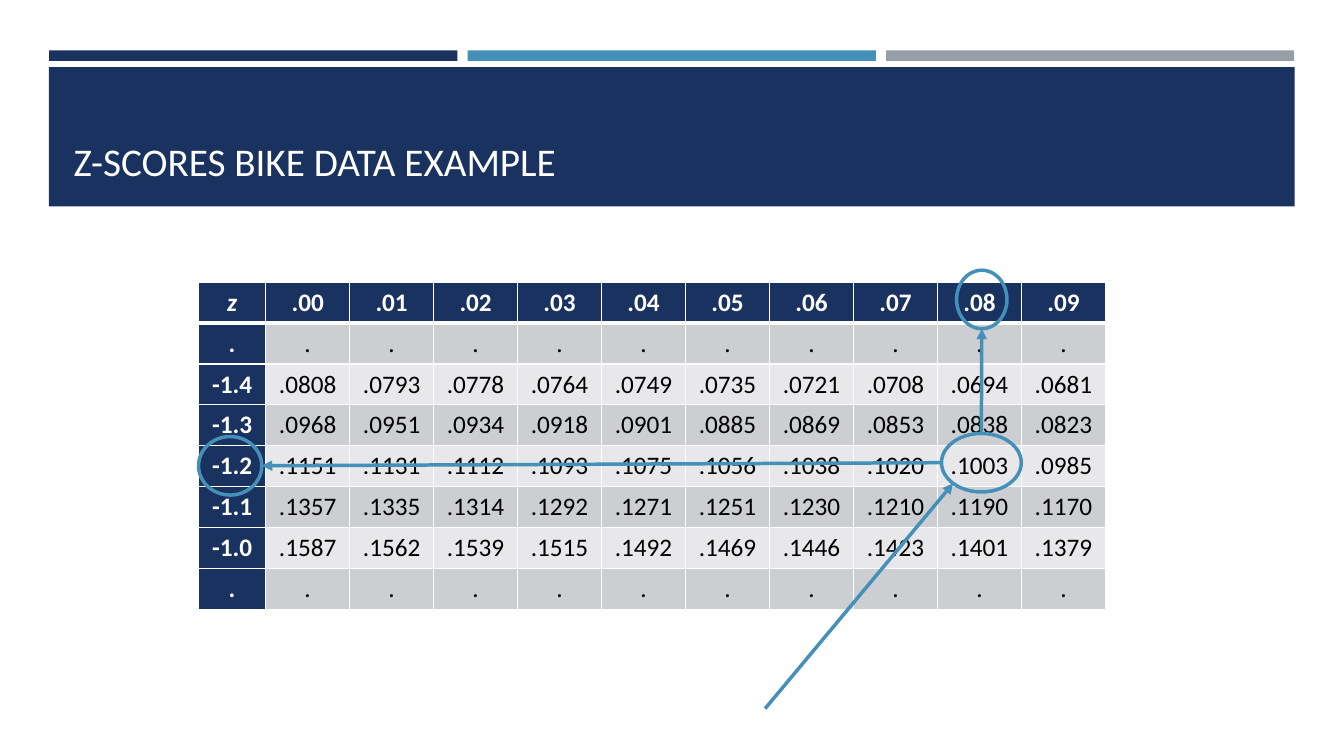
from math import sqrt

from lxml import etree
from pptx import Presentation
from pptx.dml.color import RGBColor
from pptx.enum.shapes import MSO_CONNECTOR, MSO_SHAPE
from pptx.enum.text import MSO_ANCHOR, PP_ALIGN
from pptx.oxml.ns import qn
from pptx.util import Pt

RECT, OVAL = MSO_SHAPE.RECTANGLE, MSO_SHAPE.OVAL
STRAIGHT = MSO_CONNECTOR.STRAIGHT
MIDDLE, BOTTOM = MSO_ANCHOR.MIDDLE, MSO_ANCHOR.BOTTOM
LEFT, CENTER = PP_ALIGN.LEFT, PP_ALIGN.CENTER

FONT = "Calibri"
NAVY, BLUE, GRAY = "1A3260", "4590B8", "969FA7"
WHITE, BLACK = "FFFFFF", "000000"
BANDS = ("E8E8EA", "CDCED2")

TITLE = "Z-SCORES BIKE DATA EXAMPLE"
Z_TABLE = [
    ["z", ".00", ".01", ".02", ".03", ".04", ".05", ".06", ".07", ".08", ".09"],
    ["."] * 11,
    ["-1.4", ".0808", ".0793", ".0778", ".0764", ".0749", ".0735", ".0721", ".0708", ".0694", ".0681"],
    ["-1.3", ".0968", ".0951", ".0934", ".0918", ".0901", ".0885", ".0869", ".0853", ".0838", ".0823"],
    ["-1.2", ".1151", ".1131", ".1112", ".1093", ".1075", ".1056", ".1038", ".1020", ".1003", ".0985"],
    ["-1.1", ".1357", ".1335", ".1314", ".1292", ".1271", ".1251", ".1230", ".1210", ".1190", ".1170"],
    ["-1.0", ".1587", ".1562", ".1539", ".1515", ".1492", ".1469", ".1446", ".1423", ".1401", ".1379"],
    ["."] * 11,
]

# Lengths in points: left, top, width, height
BANNER = (34.9, 48, 889.9, 99.4)
BAR_LEFT, BAR_TOP, BAR_W, BAR_H, BAR_STEP = 35.1, 36, 291.6, 7.6, 298.9
TITLE_BOX = (45.4, 57.6, 868.3, 77.8)
TABLE_LEFT, TABLE_TOP = 141.8, 201.6
Z_COL_W, COL_W, ROW_H = 48, 60, 29.16
COLUMN_RING = (683.3, 193, 36, 41.8)
ROW_RING = (141.8, 311.8, 45.2, 41.8)
VALUE_RING = (672.5, 309.6, 57, 41.8)
POINTER_START = (546.5, 506.2)


def rgb(color):
    return RGBColor.from_string(color)


def points(values):
    return [Pt(v) for v in values]


def style_text(tf, size, color, align, anchor, bold=False, italic=False):
    tf.vertical_anchor = anchor
    p = tf.paragraphs[0]
    p.alignment = align
    font = p.runs[0].font
    font.name, font.size, font.bold, font.italic = FONT, Pt(size), bold, italic
    font.color.rgb = rgb(color)


def add_block(s, box, color):
    sp = s.shapes.add_shape(RECT, *points(box))
    sp.shadow.inherit = False
    sp.fill.solid()
    sp.fill.fore_color.rgb = rgb(color)
    sp.line.fill.background()


def add_ring(s, box):
    sp = s.shapes.add_shape(OVAL, *points(box))
    sp.shadow.inherit = False
    sp.fill.background()
    sp.line.color.rgb = rgb(BLUE)
    sp.line.width = Pt(2.5)


def add_arrow(s, start, end):
    arrow = s.shapes.add_connector(STRAIGHT, *points(start + end))
    arrow.line.color.rgb = rgb(BLUE)
    arrow.line.width = Pt(2.5)
    ln = arrow.line._get_or_add_ln()
    etree.SubElement(ln, qn("a:tailEnd"), type="triangle")
    etree.SubElement(arrow._element.spPr, qn("a:effectLst"))


def ring_point(box, dx, dy):
    """Point on a ring; (dx, dy) is a unit vector from its centre."""
    left, top, width, height = box
    return left + width / 2 * (1 + dx), top + height / 2 * (1 + dy)


def set_borders(cell, row):
    """White cell borders, with a thicker rule under the header row."""
    tcPr = cell._tc.get_or_add_tcPr()
    widths = {"lnL": 1, "lnR": 1, "lnT": 3 if row == 1 else 1, "lnB": 3 if row == 0 else 1}
    for i, (tag, width) in enumerate(widths.items()):
        ln = etree.Element(qn("a:" + tag), w=str(Pt(width)))
        fill = etree.SubElement(ln, qn("a:solidFill"))
        etree.SubElement(fill, qn("a:srgbClr"), val=WHITE)
        tcPr.insert(i, ln)


def add_z_table(s):
    rows, cols = len(Z_TABLE), len(Z_TABLE[0])
    width = Z_COL_W + COL_W * (cols - 1)
    box = points((TABLE_LEFT, TABLE_TOP, width, ROW_H * rows))
    table = s.shapes.add_table(rows, cols, *box).table
    for c, column in enumerate(table.columns):
        column.width = Pt(COL_W if c else Z_COL_W)
    for r, values in enumerate(Z_TABLE):
        table.rows[r].height = Pt(ROW_H)
        for c, value in enumerate(values):
            cell = table.cell(r, c)
            header = r == 0 or c == 0
            cell.fill.solid()
            cell.fill.fore_color.rgb = rgb(NAVY if header else BANDS[r % 2])
            cell.vertical_anchor = MIDDLE
            cell.text_frame.text = value
            style_text(cell.text_frame, 18, WHITE if header else BLACK, CENTER, MIDDLE,
                       bold=header, italic=value == "z")
            set_borders(cell, r)


def main():
    prs = Presentation()
    prs.slide_width, prs.slide_height = Pt(960), Pt(540)
    s = prs.slides.add_slide(prs.slide_layouts[5])

    for i, color in enumerate((NAVY, BLUE, GRAY)):
        add_block(s, (BAR_LEFT + i * BAR_STEP, BAR_TOP, BAR_W, BAR_H), color)
    add_block(s, BANNER, NAVY)

    title = s.shapes.title
    title.left, title.top, title.width, title.height = points(TITLE_BOX)
    title.text_frame.text = TITLE
    style_text(title.text_frame, 28, WHITE, LEFT, BOTTOM)
    s.shapes._spTree.append(title._element)  # in front of the banner

    add_z_table(s)
    for ring in (COLUMN_RING, ROW_RING, VALUE_RING):
        add_ring(s, ring)
    add_arrow(s, ring_point(VALUE_RING, 0, -1), ring_point(COLUMN_RING, 0, 1))
    add_arrow(s, ring_point(VALUE_RING, -1, 0), ring_point(ROW_RING, 1, 0))
    diagonal = sqrt(0.5)
    add_arrow(s, POINTER_START, ring_point(VALUE_RING, -diagonal, diagonal))

    prs.save("out.pptx")


if __name__ == "__main__":
    main()
